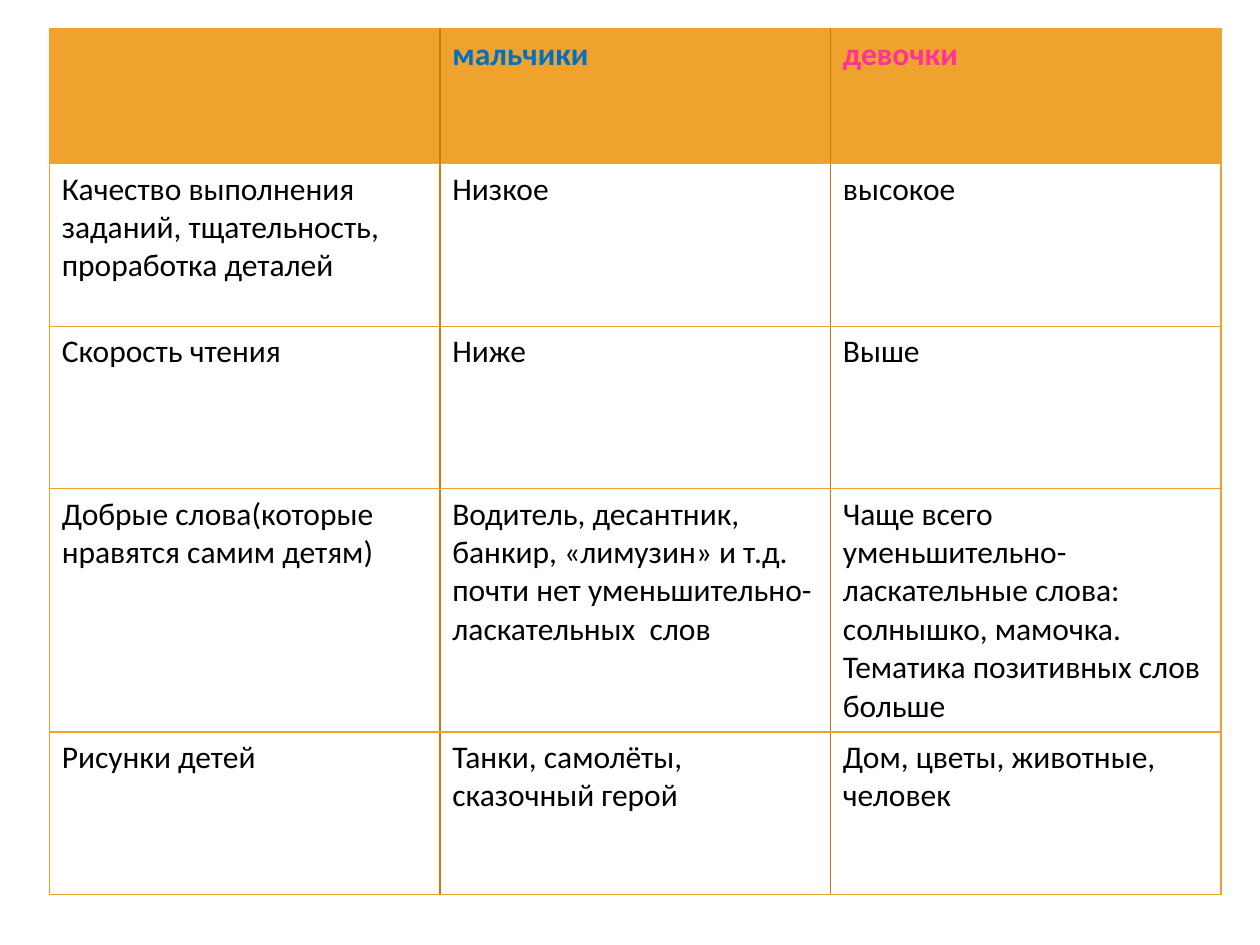
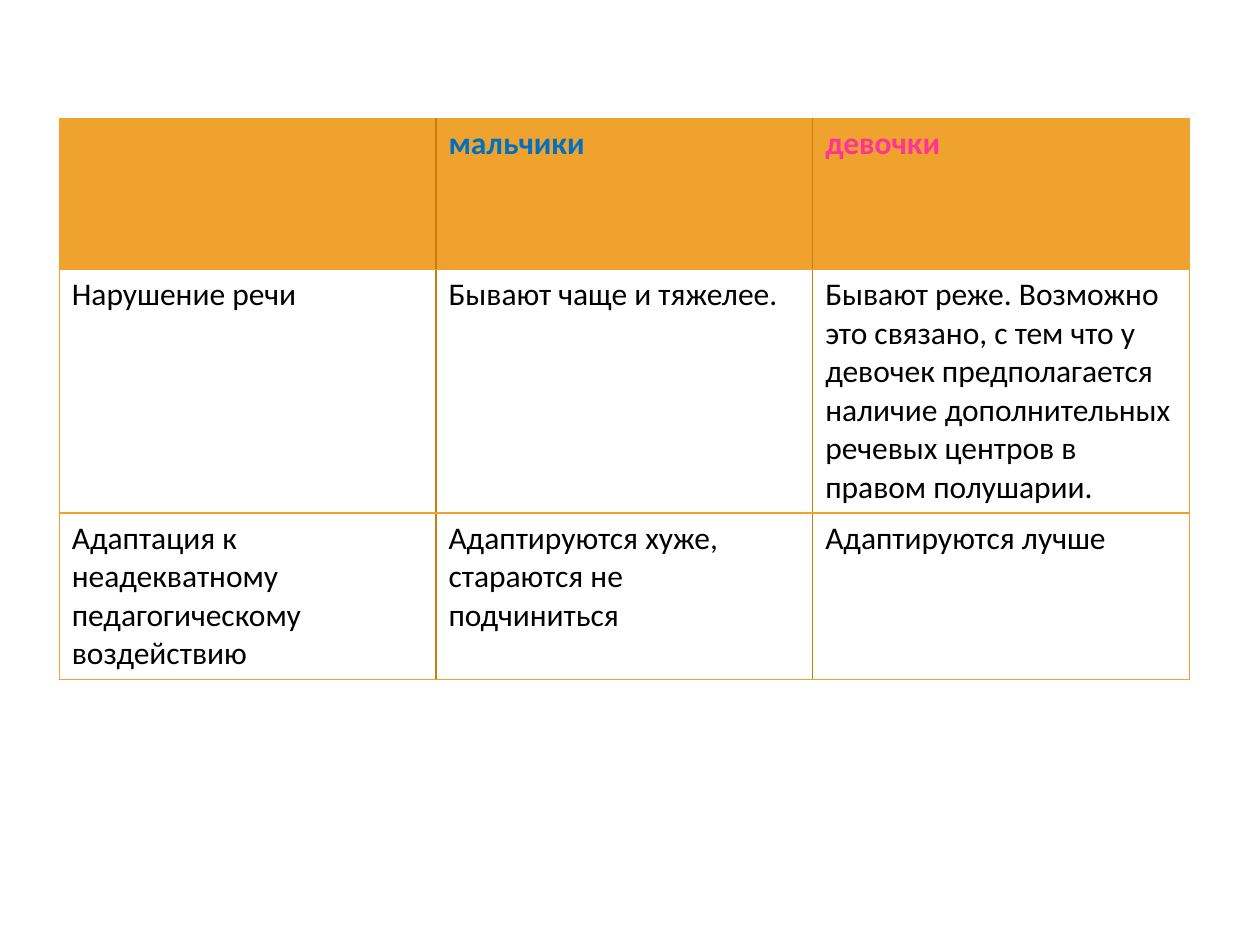
from lxml import etree
from pptx import Presentation
from pptx.dml.color import RGBColor
from pptx.oxml.ns import qn
from pptx.util import Inches, Pt

ORANGE, DARK_ORANGE = "F0A22E", "C87D0E"
BLUE, PINK, BLACK = "0070C0", "FF3399", "000000"
FONT, TEXT_SIZE = "Calibri", 18
OUTER, INNER = (ORANGE, 0.79), (DARK_ORANGE, 1)

HEADINGS = ("", "мальчики", "девочки")
HEADING_COLORS = (BLACK, BLUE, PINK)

COMPARISONS = [
    {
        "left": 0.39, "top": 0.23, "column": 3.1,
        "heights": (1.07, 1.29, 1.29, 1.93, 1.29),
        "traits": [
            ("Качество выполнения заданий, тщательность, проработка деталей",
             "Низкое", "высокое"),
            ("Скорость чтения", "Ниже", "Выше"),
            ("Добрые слова(которые нравятся самим детям)",
             "Водитель, десантник,\nбанкир, «лимузин» и т.д. почти нет "
             "уменьшительно-ласкательных  слов",
             "Чаще всего уменьшительно-ласкательные слова: солнышко, мамочка. "
             "Тематика позитивных слов больше"),
            ("Рисунки детей", "Танки, самолёты, сказочный герой",
             "Дом, цветы, животные, человек"),
        ],
    },
    {
        "left": 0.47, "top": 0.94, "column": 2.99,
        "heights": (1.2, 1.93, 1.32),
        "traits": [
            ("Нарушение речи", "Бывают чаще и тяжелее.",
             "Бывают реже. Возможно это связано, с тем что у девочек "
             "предполагается наличие дополнительных речевых центров в "
             "правом полушарии."),
            ("Адаптация к неадекватному педагогическому воздействию",
             "Адаптируются хуже, стараются не подчиниться",
             "Адаптируются лучше"),
        ],
    },
]


def rgb(value):
    return RGBColor.from_string(value)


def set_borders(cell, left, right):
    properties = cell._tc.get_or_add_tcPr()
    sides = (("a:lnL", left), ("a:lnR", right), ("a:lnT", OUTER), ("a:lnB", OUTER))
    for position, (tag, (color, width)) in enumerate(sides):
        line = etree.Element(qn(tag), w=str(int(Pt(width))))
        solid = etree.SubElement(line, qn("a:solidFill"))
        etree.SubElement(solid, qn("a:srgbClr"), val=color)
        properties.insert(position, line)


def write(cell, text, color, bold):
    for index, words in enumerate(text.split("\n")):
        frame = cell.text_frame
        paragraph = frame.add_paragraph() if index else frame.paragraphs[0]
        paragraph.font.size = Pt(TEXT_SIZE)
        if words:
            run = paragraph.add_run()
            run.text = words
            run.font.name = FONT
            run.font.size = Pt(TEXT_SIZE)
            run.font.bold = bold
            run.font.color.rgb = rgb(color)


def add_comparison(slide, comparison):
    rows = [HEADINGS] + comparison["traits"]
    heights, count = comparison["heights"], len(HEADINGS)
    table = slide.shapes.add_table(
        len(rows), count, Inches(comparison["left"]), Inches(comparison["top"]),
        Inches(comparison["column"] * count), Inches(sum(heights))).table
    table.first_row = table.horz_banding = False
    for column in table.columns:
        column.width = Inches(comparison["column"])
    for r, texts in enumerate(rows):
        table.rows[r].height = Inches(heights[r])
        heading = r == 0
        for c, text in enumerate(texts):
            cell = table.cell(r, c)
            if heading:
                cell.fill.solid()
                cell.fill.fore_color.rgb = rgb(ORANGE)
            else:
                cell.fill.background()
            set_borders(cell, INNER if c else OUTER, INNER if c < count - 1 else OUTER)
            write(cell, text, HEADING_COLORS[c] if heading else BLACK, heading)


def main():
    deck = Presentation()
    deck.slide_width, deck.slide_height = Inches(10), Inches(7.5)
    blank = deck.slide_layouts[6]
    for comparison in COMPARISONS:
        add_comparison(deck.slides.add_slide(blank), comparison)
    deck.save("out.pptx")


if __name__ == "__main__":
    main()
